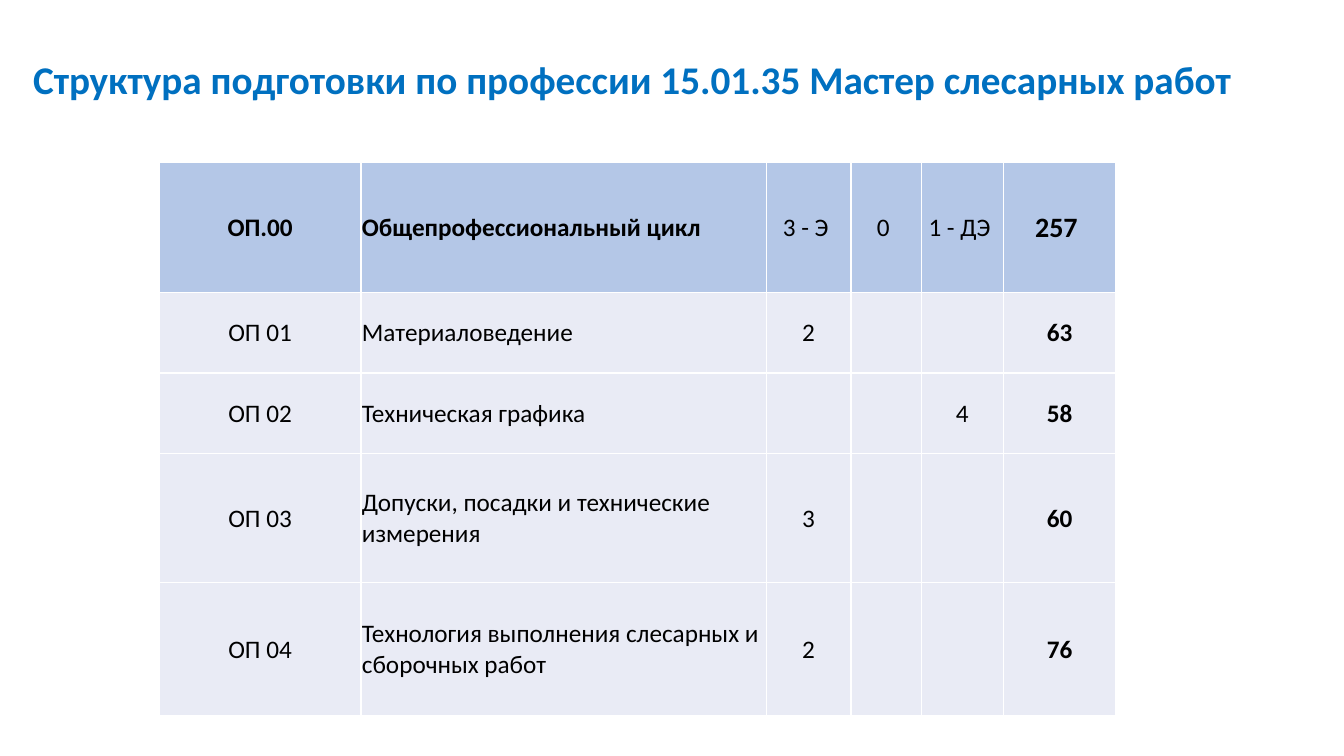
from dataclasses import dataclass

from lxml import etree
from pptx import Presentation
from pptx.dml.color import RGBColor
from pptx.enum.text import MSO_ANCHOR, PP_ALIGN
from pptx.oxml.ns import qn
from pptx.util import Inches, Pt

MIDDLE = MSO_ANCHOR.MIDDLE
LEFT = PP_ALIGN.LEFT
CENTER = PP_ALIGN.CENTER


@dataclass(frozen=True)
class Theme:
    """Hold the colours, font and type sizes of the slide."""
    font: str = "Calibri"
    title_color: str = "0070C0"
    text_color: str = "000000"
    cycle_fill: str = "B4C7E7"
    subject_fill: str = "E9EBF5"
    border_color: str = "FFFFFF"
    border_width: int = 1
    title_size: int = 28
    total_size: int = 20
    body_size: int = 18


THEME = Theme()
TITLE = "Структура подготовки по профессии 15.01.35 Мастер слесарных работ"
COLUMN_WIDTHS = (2, 4.02, 0.84, 0.7, 0.81, 1.12)
ROW_HEIGHTS = (1.29, 0.8, 0.8, 1.28, 1.32)
CURRICULUM = (
    ("ОП.00", "Общепрофессиональный цикл", "3 - Э ", "0 ", "1 - ДЭ ", "257 "),
    ("ОП 01", "Материаловедение", "2", "", "", "63"),
    ("ОП 02", "Техническая графика", "", "", "4", "58"),
    ("ОП 03", "Допуски, посадки и технические измерения", "3", "", "", "60"),
    ("ОП 04", "Технология выполнения слесарных и сборочных работ", "2", "", "", "76"),
)
NAME_COLUMN = 1
HOURS_COLUMN = len(COLUMN_WIDTHS) - 1


def add_run(paragraph, text, size, color, bold):
    """Add one formatted run to a paragraph."""
    run = paragraph.add_run()
    run.text = text
    run.font.name = THEME.font
    run.font.size = Pt(size)
    run.font.bold = bold
    run.font.color.rgb = RGBColor.from_string(color)


def add_borders(cell):
    """Draw a thin line on all four sides of a cell."""
    properties = cell._tc.get_or_add_tcPr()
    for side in ("a:lnL", "a:lnR", "a:lnT", "a:lnB"):
        line = etree.SubElement(properties, qn(side), w=str(Pt(THEME.border_width)))
        fill = etree.SubElement(line, qn("a:solidFill"))
        etree.SubElement(fill, qn("a:srgbClr"), val=THEME.border_color)


def add_title(slide, left, top, width, height):
    """Place the slide heading in the given box."""
    box = slide.shapes.add_textbox(Inches(left), Inches(top), Inches(width), Inches(height))
    frame = box.text_frame
    frame.word_wrap = True
    frame.vertical_anchor = MIDDLE
    paragraph = frame.paragraphs[0]
    paragraph.line_spacing = 0.9
    add_run(paragraph, TITLE, THEME.title_size, THEME.title_color, True)


def fill_cell(cell, text, row, column):
    """Format one cell by its row and column and write its text."""
    is_cycle = row == 0
    is_hours = column == HOURS_COLUMN
    add_borders(cell)
    cell.fill.solid()
    cell.fill.fore_color.rgb = RGBColor.from_string(
        THEME.cycle_fill if is_cycle else THEME.subject_fill)
    cell.vertical_anchor = MIDDLE
    cell.margin_left = cell.margin_right = cell.margin_top = Inches(0.01)
    cell.margin_bottom = Inches(0)
    paragraph = cell.text_frame.paragraphs[0]
    paragraph.alignment = LEFT if column == NAME_COLUMN else CENTER
    if text:
        size = THEME.total_size if is_cycle and is_hours else THEME.body_size
        bold = is_hours or (is_cycle and column <= NAME_COLUMN)
        add_run(paragraph, text, size, THEME.text_color, bold)


def add_curriculum(slide, left, top, width, height):
    """Place the curriculum table in the given box."""
    frame = slide.shapes.add_table(
        len(ROW_HEIGHTS), len(COLUMN_WIDTHS),
        Inches(left), Inches(top), Inches(width), Inches(height))
    table = frame.table
    table.first_row = False
    table.horz_banding = False
    for column, column_width in zip(table.columns, COLUMN_WIDTHS):
        column.width = Inches(column_width)
    for row, row_height in zip(table.rows, ROW_HEIGHTS):
        row.height = Inches(row_height)
    for row, texts in enumerate(CURRICULUM):
        for column, text in enumerate(texts):
            fill_cell(table.cell(row, column), text, row, column)


def main():
    """Build the slide and save the presentation."""
    presentation = Presentation()
    presentation.slide_width = Inches(13.33)
    presentation.slide_height = Inches(7.5)
    slide = presentation.slides.add_slide(presentation.slide_layouts[6])
    add_title(slide, 0.23, 0.4, 12.76, 0.83)
    add_curriculum(slide, 1.58, 1.61, sum(COLUMN_WIDTHS), sum(ROW_HEIGHTS))
    presentation.save("out.pptx")


if __name__ == "__main__":
    main()
